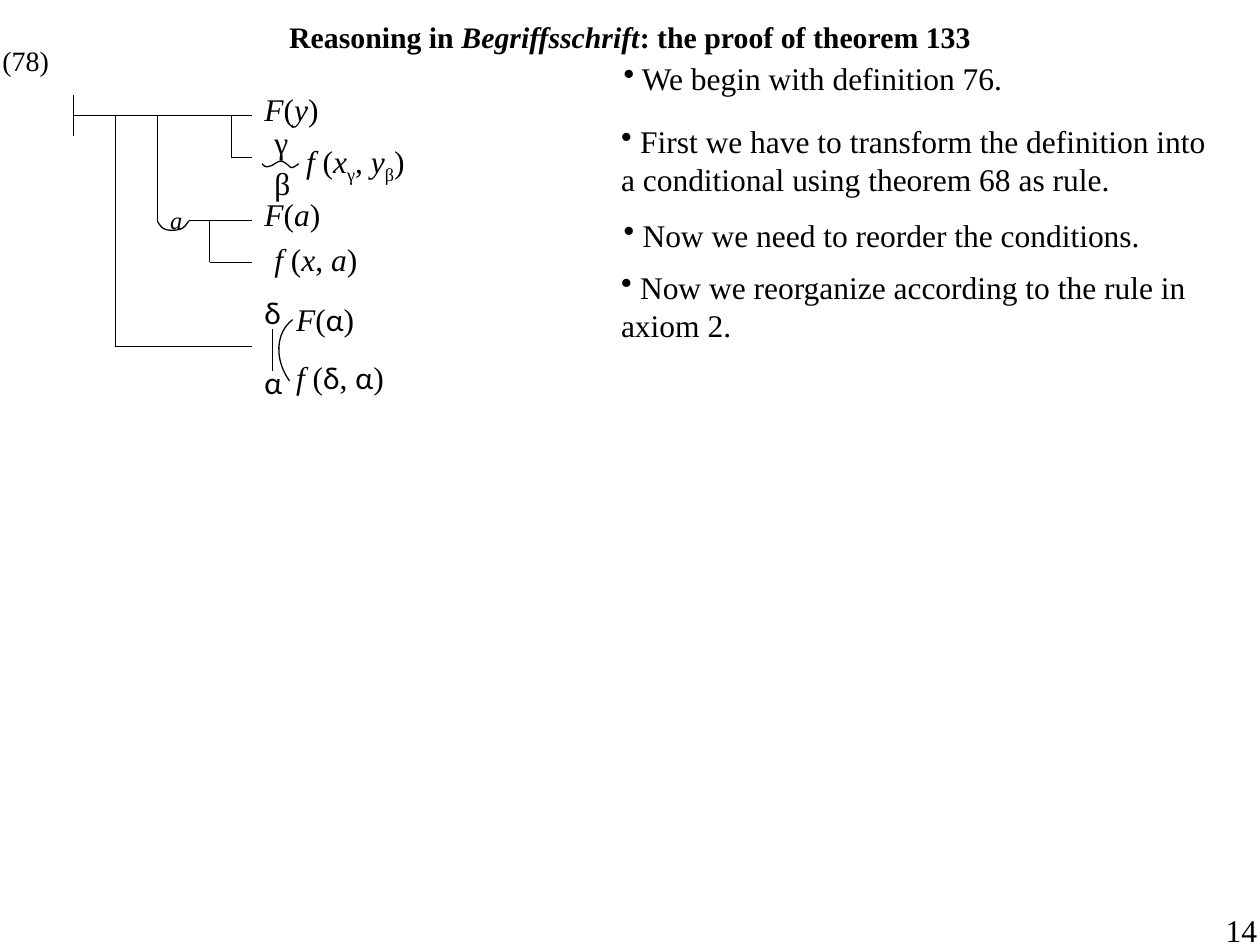
from itertools import groupby

from lxml import etree
from pptx import Presentation
from pptx.dml.color import RGBColor
from pptx.enum.shapes import MSO_CONNECTOR, MSO_SHAPE
from pptx.enum.text import MSO_ANCHOR, MSO_AUTO_SIZE, PP_ALIGN
from pptx.oxml.ns import qn
from pptx.util import Cm, Pt

LINE = MSO_CONNECTOR.STRAIGHT
ARC = MSO_SHAPE.ARC
TOP = MSO_ANCHOR.TOP
CENTER = PP_ALIGN.CENTER
FIT = MSO_AUTO_SIZE.SHAPE_TO_FIT_TEXT
NO_FIT = MSO_AUTO_SIZE.NONE

COLORS = {"ink": "000000"}
SERIF, SANS = "Times New Roman", "Calibri"

# Columns and rows of the concept script, in cm
BAR, OUTER, INNER, HOOK, LOW, HIGH, END = 1.48, 2.33, 3.18, 3.81, 4.23, 4.66, 5.08
TRUNK, COND, GENERAL, SUB, BASE = 2.33, 3.18, 4.45, 5.29, 6.99

STROKES = [
    (BAR, TRUNK - 0.42, BAR, TRUNK + 0.42),
    (BAR, TRUNK, END, TRUNK),
    (HIGH, TRUNK, HIGH, COND),
    (HIGH, COND, END, COND),
    (INNER, TRUNK, INNER, GENERAL + 0.02),
    (HOOK, GENERAL, END, GENERAL),
    (LOW, GENERAL, LOW, SUB),
    (LOW, SUB, END, SUB),
    (OUTER, TRUNK, OUTER, BASE),
    (OUTER, BASE, END, BASE),
    (5.5, 6.63, 5.5, 7.47),
]

# Bezier curves: a start point, then three points for each segment
WAVE = [(5.28, 3.3), (5.33, 3.35), (5.36, 3.38), (5.44, 3.35),
        (5.49, 3.35), (5.59, 3.25), (5.66, 3.25),
        (5.74, 3.25), (5.82, 3.35), (5.87, 3.38),
        (5.94, 3.38), (6.02, 3.3), (6.02, 3.3)]
HOLLOW = [(HOOK, GENERAL), (3.76, 4.52), (3.71, 4.6), (3.63, 4.62),
          (3.53, 4.65), (3.4, 4.65), (3.33, 4.62),
          (3.25, 4.6), (INNER, 4.47), (INNER, 4.47)]

FORMULAS = [
    ("F(y)", 5.08, 1.7, 1.63),
    ("f (xγ, yβ)", 5.92, 2.74, 2.57),
    ("F(a)", 5.08, 3.81, 1.65),
    ("f (x, a)", 5.28, 4.72, 2.21),
    ("F(α)", 5.72, 5.92, 1.7),
    ("f (δ, α)", 5.72, 7.09, 2.57),
    ("δ", 5.08, 5.79, 0.84),
    ("α", 5.08, 7.19, 0.89),
]

NOTES = [
    ("We begin with definition 76.", 12.32, 1.07, 8.23, False),
    ("First we have to transform the definition into a conditional "
     "using theorem 68 as rule.", 12.27, 2.34, 12.7, True),
    ("Now we need to reorder the conditions.", 12.32, 4.24, 10.95, False),
    ("Now we reorganize according to the rule in axiom 2.",
     12.27, 5.28, 13.13, True),
]


def color(name):
    return RGBColor.from_string(COLORS[name])


def add_run(par, text, size=18, face=SERIF, bold=False, italic=False):
    run = par.add_run()
    run.text = text
    font = run.font
    font.size, font.name = Pt(size), face
    font.bold, font.italic = bold, italic
    font.color.rgb = color("ink")
    return run


def add_box(slide, left, top, width, height=1.02, wrap=False):
    """Add an empty text box and return its first paragraph."""
    box = slide.shapes.add_textbox(Cm(left), Cm(top), Cm(width), Cm(height))
    frame = box.text_frame
    frame.word_wrap = wrap
    frame.auto_size = FIT
    return frame.paragraphs[0]


def add_label(slide, text, left, top, width, height=1.02, **style):
    add_run(add_box(slide, left, top, width, height), text, **style)


def kind(char):
    if char in "γβ":
        return "index"
    if char in "δα":
        return "sans"
    return "italic" if char.isalpha() else "plain"


def add_formula(slide, text, left, top, width):
    """Set Latin letters in italics, γ and β as indices, δ and α in sans."""
    par = add_box(slide, left, top, width)
    for mode, chars in groupby(text, kind):
        run = add_run(par, "".join(chars), face=SANS if mode == "sans" else SERIF,
                      italic=mode == "italic")
        if mode == "index":
            run.font._element.set("baseline", "-25000")


def add_note(slide, text, left, top, width, wrap):
    par = add_box(slide, left, top, width, 1.8 if wrap else 1.02, wrap)
    props = par._p.get_or_add_pPr()
    etree.SubElement(props, qn("a:buChar")).set("char", "•")
    add_run(par, " " + text)


def ink_line(shape):
    shape.line.color.rgb = color("ink")
    shape.line.width = Pt(0.75)


def add_stroke(slide, *ends):
    line = slide.shapes.add_connector(LINE, *map(Cm, ends))
    ink_line(line)
    etree.SubElement(line._element.spPr, qn("a:effectLst"))


def bezier(a, b, c, d, t):
    u = 1 - t
    return tuple(Cm(u**3 * p + 3 * u * u * t * q + 3 * u * t * t * r + t**3 * s)
                 for p, q, r, s in zip(a, b, c, d))


def ink_open(shape):
    shape.shadow.inherit = False
    shape.fill.background()
    ink_line(shape)


def add_curve(slide, knots, steps=8):
    points = [bezier(*knots[i:i + 4], n / steps)
              for i in range(0, len(knots) - 1, 3) for n in range(1, steps + 1)]
    pen = slide.shapes.build_freeform(*map(Cm, knots[0]))
    pen.add_line_segments(points, close=False)
    ink_open(pen.convert_to_shape())


def add_arc(slide, left, top, width, height, turn):
    arc = slide.shapes.add_shape(ARC, Cm(left), Cm(top), Cm(width), Cm(height))
    arc.rotation = turn
    ink_open(arc)


def set_title(slide):
    title = slide.shapes.title
    title.left, title.top = Cm(0), Cm(0.25)
    title.width, title.height = Cm(25.4), Cm(0.99)
    frame = title.text_frame
    frame.word_wrap, frame.auto_size = True, NO_FIT
    frame.vertical_anchor = TOP
    par = frame.paragraphs[0]
    par.alignment = CENTER
    for text, italic in (("Reasoning in ", False), ("Begriffsschrift", True),
                         (": the proof of theorem 133", False)):
        add_run(par, text, 17, bold=True, italic=italic)


def main():
    deck = Presentation()
    deck.slide_width, deck.slide_height = Cm(25.4), Cm(19.05)
    slide = deck.slides.add_slide(deck.slide_layouts[5])
    set_title(slide)
    for note in NOTES:
        add_note(slide, *note)
    for stroke in STROKES:
        add_stroke(slide, *stroke)
    for knots in (WAVE, HOLLOW):
        add_curve(slide, knots)
    add_arc(slide, 5.5, 6.45, 1.93, 1.55, 234.2)
    for formula in FORMULAS:
        add_formula(slide, *formula)
    add_label(slide, "γ", 5.28, 2.36, 0.79)
    add_label(slide, "β", 5.28, 3.18, 0.86)
    add_label(slide, "a", 3.18, 4.01, 0.76, 0.86, size=14, italic=True)
    add_label(slide, "(78)", -0.2, 0.76, 1.47, 0.94, size=16)
    add_label(slide, "14", 24.46, 18.24, 1.14)
    deck.save("out.pptx")


if __name__ == "__main__":
    main()
